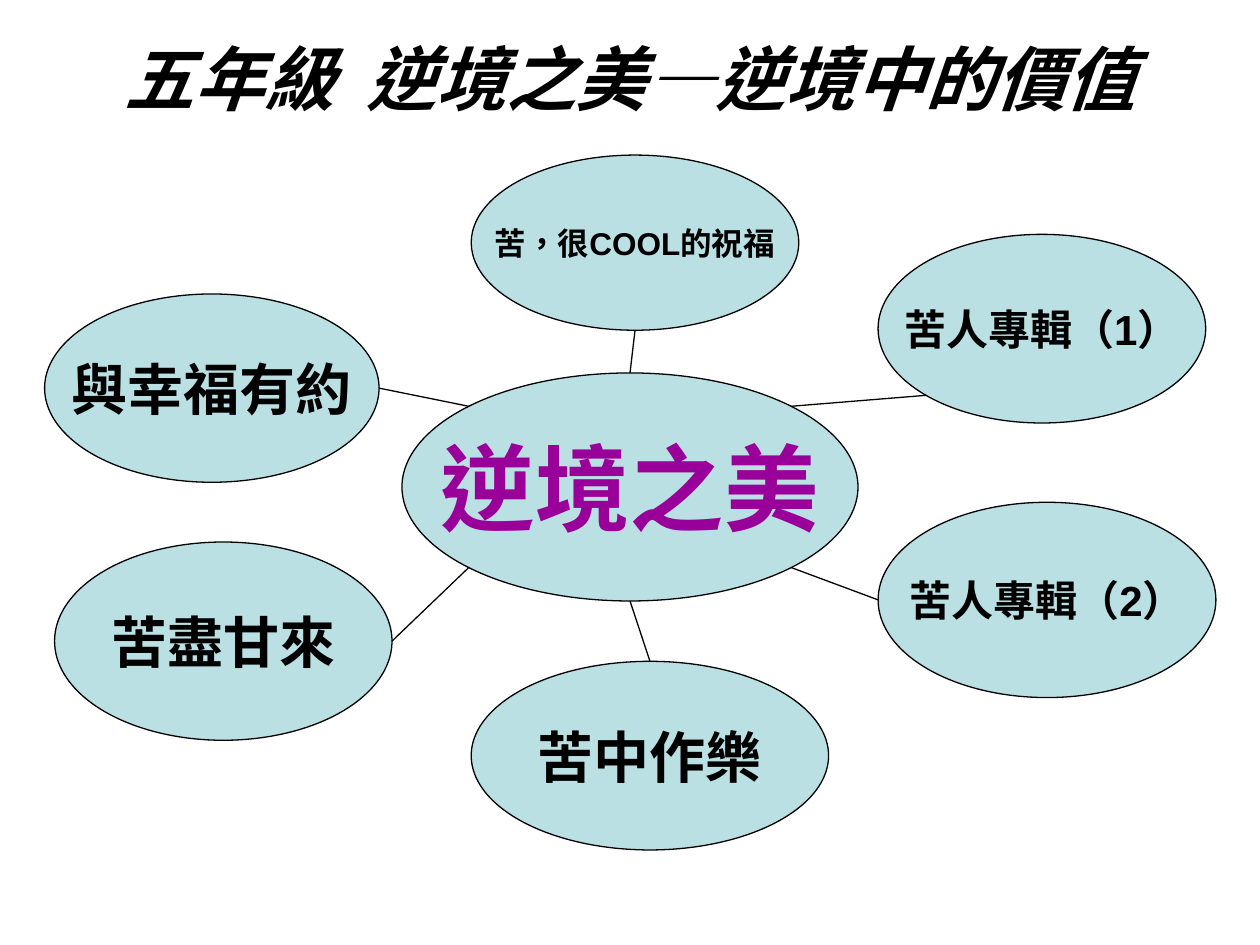
import math
import pptx
import pptx.util
import pptx.dml.color
import pptx.enum.shapes
import pptx.enum.text
import pptx.oxml.ns
import lxml.etree

Pt = pptx.util.Pt
RGB = pptx.dml.color.RGBColor.from_string
HUES = {"ink": "000000", "oval": "BBE0E3", "hub": "990099"}

deck = pptx.Presentation()
deck.slide_width, deck.slide_height = Pt(720), Pt(540)
slide = deck.slides.add_slide(deck.slide_layouts[5])


def write(shape, text, size, hue="ink", italic=False, wrap=False):
    frame = shape.text_frame
    frame.word_wrap = wrap
    frame.auto_size = pptx.enum.text.MSO_AUTO_SIZE.NONE
    frame.vertical_anchor = pptx.enum.text.MSO_ANCHOR.MIDDLE
    para = frame.paragraphs[0]
    para.alignment = pptx.enum.text.PP_ALIGN.CENTER
    run = para.add_run()
    run.text = text
    font = run.font
    font.name, font.size = "Arial", Pt(size)
    font.bold, font.italic = True, italic
    font.color.rgb = RGB(HUES[hue])
    # Traditional Chinese forms, such as the centred comma
    run._r.get_or_add_rPr().set("lang", "zh-TW")


def rim(box, angle):
    """Point on the oval in box; angle in degrees, clockwise from the right."""
    left, top, width, height = box
    turn = math.radians(angle)
    return (Pt(left + width / 2 * (1 + math.cos(turn))),
            Pt(top + height / 2 * (1 + math.sin(turn))))


# Title
title = slide.shapes.title
title.left, title.top, title.width, title.height = Pt(36), Pt(0), Pt(648), Pt(88.6)
write(title, "五年級  逆境之美—逆境中的價值", 40, italic=True, wrap=True)

# Topics: text, size, box, angle of the spoke on the hub and on the topic
hub = (229.7, 213.1, 260.6, 130.3)
topics = [
    ("苦，很COOL的祝福", 18, (269.3, 88.6, 187.2, 100.1), 270, 90),
    ("苦人專輯（1）", 24, (501.8, 133.9, 187.2, 107.8), 315, 135),
    ("苦人專輯（2）", 24, (501.8, 287, 193, 111.6), 45, 180),
    ("苦中作樂", 32, (269.3, 377.9, 204.2, 107.8), 90, 270),
    ("苦盡甘來", 32, (31.2, 309.7, 192.8, 113.3), 135, 0),
    ("與幸福有約", 32, (25.5, 168, 191.1, 107.6), 225, 0),
]

# Ovals
ovals = [("逆境之美", 54, hub, "hub")]
ovals += [(text, size, box, "ink") for text, size, box, *_ in topics]
for text, size, box, hue in ovals:
    oval = slide.shapes.add_shape(
        pptx.enum.shapes.MSO_SHAPE.OVAL, *[Pt(side) for side in box])
    oval.shadow.inherit = False
    oval.fill.solid()
    oval.fill.fore_color.rgb = RGB(HUES["oval"])
    oval.line.color.rgb = RGB(HUES["ink"])
    oval.line.width = Pt(0.75)
    write(oval, text, size, hue)

# Spokes
for _, _, box, start, end in topics:
    spoke = slide.shapes.add_connector(
        pptx.enum.shapes.MSO_CONNECTOR.STRAIGHT, *rim(hub, start), *rim(box, end))
    spoke.line.color.rgb = RGB(HUES["ink"])
    spoke.line.width = Pt(0.75)
    lxml.etree.SubElement(spoke._element.spPr, pptx.oxml.ns.qn("a:effectLst"))

deck.save("out.pptx")
